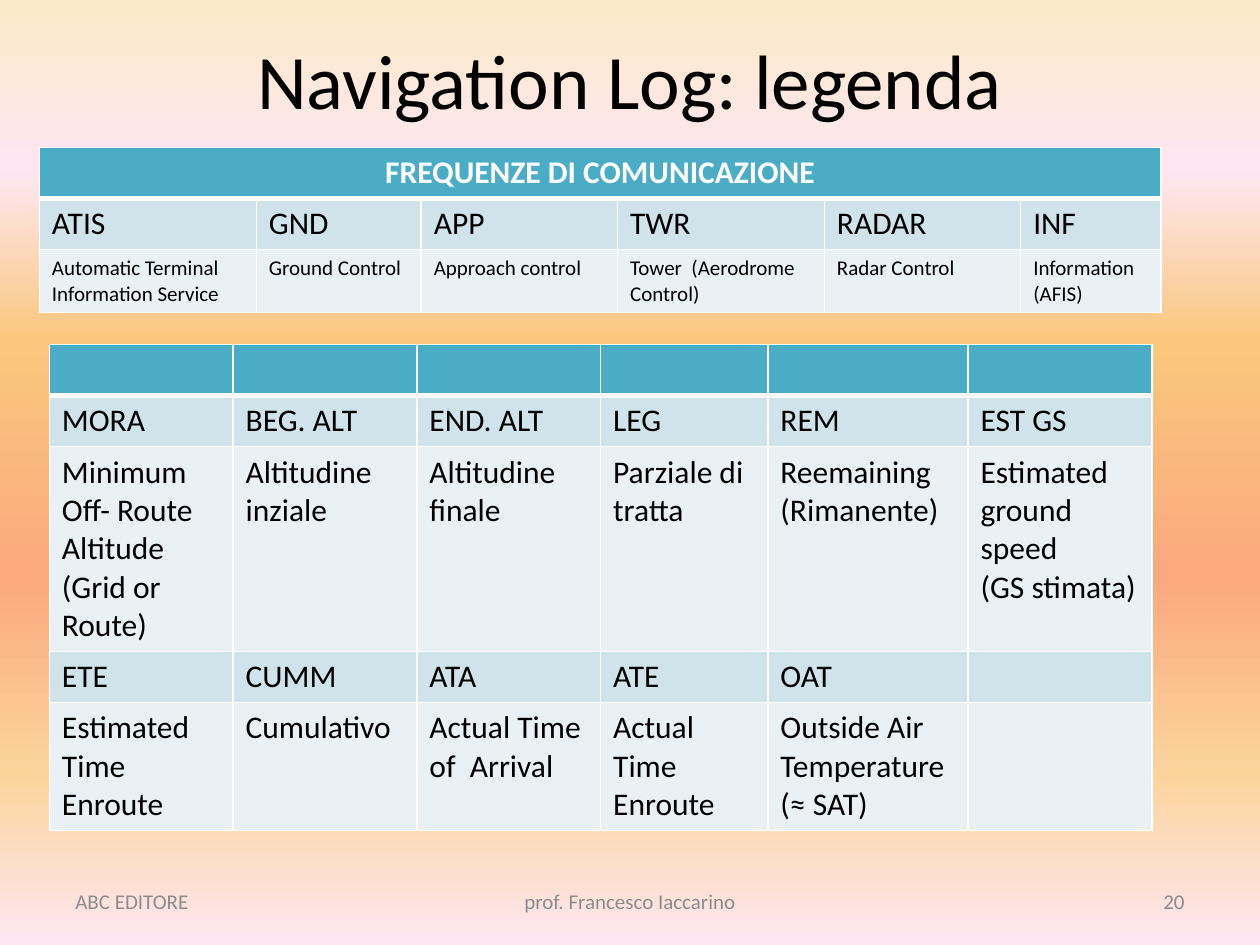
from lxml import etree
from pptx import Presentation
from pptx.dml.color import RGBColor
from pptx.enum.text import MSO_ANCHOR, PP_ALIGN
from pptx.oxml.ns import qn
from pptx.util import Pt

LEFT, CENTER, RIGHT = PP_ALIGN.LEFT, PP_ALIGN.CENTER, PP_ALIGN.RIGHT
MIDDLE = MSO_ANCHOR.MIDDLE
TITLE_ONLY = 5

FONT = "Calibri"
BLACK, WHITE, GREY = "000000", "FFFFFF", "8C8C8C"
HEADER_FILL, BAND_FILLS = "4BACC6", ("D0E3EA", "E9F1F5")
GRADIENT = [(0, "FBEAC7"), (18, "FEE7F2"), (36, "FAC77D"),
            (61, "FBA97D"), (82, "FBD49C"), (100, "FEE7F2")]

TITLE = "Navigation Log: legenda"
FOOTERS = [
    ("ABC EDITORE", 36, 168, LEFT),
    ("prof. Francesco Iaccarino", 246, 228, CENTER),
    ("20", 516, 168, RIGHT),
]
FREQUENCIES = {
    "position": (22.5, 84.2),
    "columns": [124, 94.2, 112.2, 118.2, 112.2, 80.1],
    "heights": [29.2, 29.2, 36],
    "sizes": [18, 18, 12],
    "merged": True,
    "rows": [
        ["FREQUENZE DI COMUNICAZIONE", "", "", "", "", ""],
        ["ATIS", "GND", "APP", "TWR", "RADAR", "INF"],
        ["Automatic Terminal Information Service", "Ground Control",
         "Approach control", "Tower  (Aerodrome Control)",
         "Radar Control", "Information (AFIS)"],
    ],
}
ABBREVIATIONS = {
    "position": (28.2, 196.9),
    "columns": [105, 105, 105, 95.6, 114.4, 105],
    "heights": [29.2, 29.2, 117, 29.2, 73],
    "sizes": [18] * 5,
    "merged": False,
    "rows": [
        [""] * 6,
        ["MORA", "BEG. ALT", "END. ALT", "LEG", "REM", "EST GS"],
        ["Minimum Off- Route Altitude (Grid or Route)", "Altitudine inziale",
         "Altitudine finale", "Parziale di tratta", "Reemaining (Rimanente)",
         "Estimated ground speed\n(GS stimata)"],
        ["ETE", "CUMM", "ATA", "ATE", "OAT", ""],
        ["Estimated Time Enroute", "Cumulativo", "Actual Time of  Arrival",
         "Actual Time Enroute", "Outside Air Temperature (≈ SAT)", ""],
    ],
}


def rgb(value):
    return RGBColor.from_string(value)


def write(text_frame, text, size=18, color=BLACK, bold=False, align=LEFT):
    text_frame.word_wrap = True
    text_frame.text = text
    for paragraph in text_frame.paragraphs:
        paragraph.alignment = align
        font = paragraph.font
        font.name, font.size, font.bold = FONT, Pt(size), bold
        font.color.rgb = rgb(color)
        for run in paragraph.runs:
            run.font.name, run.font.size, run.font.bold = FONT, Pt(size), bold
            run.font.color.rgb = rgb(color)


def set_background(slide):
    fill = slide.background.fill
    fill.gradient()
    fill.gradient_angle = 270
    stops = slide.element.find(".//" + qn("a:gsLst"))
    for stop in list(stops):
        stops.remove(stop)
    for position, color in GRADIENT:
        stop = etree.SubElement(stops, qn("a:gs"), pos=str(position * 1000))
        etree.SubElement(stop, qn("a:srgbClr"), val=color)


def set_borders(cell, row_index):
    widths = {"L": 1, "R": 1, "T": 3 if row_index == 1 else 1,
              "B": 3 if row_index == 0 else 1}
    properties = cell._tc.get_or_add_tcPr()
    for side, width in widths.items():
        line = etree.SubElement(properties, qn("a:ln" + side), w=str(Pt(width)))
        fill = etree.SubElement(line, qn("a:solidFill"))
        etree.SubElement(fill, qn("a:srgbClr"), val=WHITE)


def add_legend(slide, legend):
    rows, columns, heights = legend["rows"], legend["columns"], legend["heights"]
    left, top = legend["position"]
    table = slide.shapes.add_table(
        len(rows), len(columns), Pt(left), Pt(top),
        Pt(sum(columns)), Pt(sum(heights))).table
    for column, width in zip(table.columns, columns):
        column.width = Pt(width)
    for row_index, texts in enumerate(rows):
        table.rows[row_index].height = Pt(heights[row_index])
        header = row_index == 0
        for column_index, text in enumerate(texts):
            cell = table.cell(row_index, column_index)
            set_borders(cell, row_index)
            cell.fill.solid()
            cell.fill.fore_color.rgb = rgb(
                HEADER_FILL if header else BAND_FILLS[(row_index - 1) % 2])
            write(cell.text_frame, text, size=legend["sizes"][row_index],
                  color=WHITE if header else BLACK, bold=header,
                  align=CENTER if header else LEFT)
    if legend["merged"]:
        table.cell(0, 0).merge(table.cell(0, len(columns) - 1))


def main():
    presentation = Presentation()
    presentation.slide_width, presentation.slide_height = Pt(720), Pt(540)
    slide = presentation.slides.add_slide(presentation.slide_layouts[TITLE_ONLY])
    set_background(slide)

    title = slide.shapes.title
    title.left, title.top, title.width, title.height = Pt(36), Pt(0), Pt(648), Pt(90)
    title.text_frame.vertical_anchor = MIDDLE
    write(title.text_frame, TITLE, size=44, align=CENTER)

    for text, left, width, align in FOOTERS:
        footer = slide.shapes.add_textbox(Pt(left), Pt(500.5), Pt(width), Pt(28.8))
        footer.text_frame.vertical_anchor = MIDDLE
        write(footer.text_frame, text, size=12, color=GREY, align=align)

    for legend in (FREQUENCIES, ABBREVIATIONS):
        add_legend(slide, legend)
    presentation.save("out.pptx")


if __name__ == "__main__":
    main()
